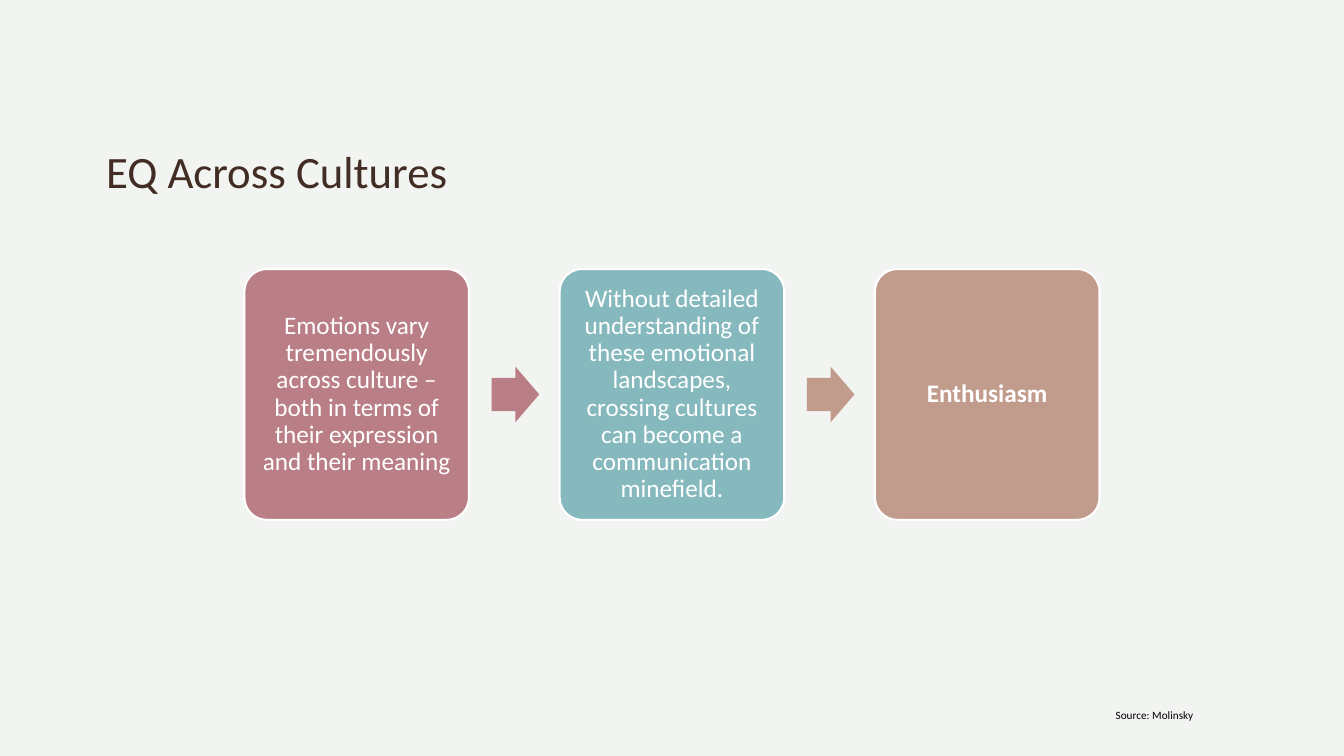
import dataclasses

import pptx
import pptx.dml.color
import pptx.enum.shapes
import pptx.enum.text
import pptx.util

Cm = pptx.util.Cm
Pt = pptx.util.Pt
Align = pptx.enum.text.PP_ALIGN
Anchor = pptx.enum.text.MSO_ANCHOR
Preset = pptx.enum.shapes.MSO_SHAPE


@dataclasses.dataclass(frozen=True)
class Theme:
    """Colours, font and type sizes of the slide."""
    font: str = "Calibri"
    background: str = "F2F4F1"
    title: str = "412D24"
    light: str = "FFFFFF"
    dark: str = "000000"
    rose: str = "BA7F86"
    teal: str = "86B9BD"
    tan: str = "C19C8D"
    title_size: int = 32
    card_size: int = 18
    source_size: int = 8


THEME = Theme()
STEPS = [
    ("Emotions vary tremendously across culture – both in terms of their "
     "expression and their meaning", THEME.rose, False),
    ("Without detailed understanding of these emotional landscapes, crossing "
     "cultures can become a communication minefield.", THEME.teal, False),
    ("Enthusiasm", THEME.tan, True),
]


def color(value):
    """Return a colour object for a hexadecimal value."""
    return pptx.dml.color.RGBColor.from_string(value)


def set_values(target, values):
    """Set each named attribute of the target."""
    for name, value in values.items():
        setattr(target, name, value)


def write_text(shape, text, size, tint, alignment, frame_values, bold=False, spacing=1.0):
    """Put one formatted paragraph into a shape."""
    frame = shape.text_frame
    set_values(frame, {"text": text, "word_wrap": True,
                       "auto_size": pptx.enum.text.MSO_AUTO_SIZE.NONE, **frame_values})
    paragraph = frame.paragraphs[0]
    set_values(paragraph, {"alignment": alignment, "line_spacing": spacing})
    font = paragraph.runs[0].font
    set_values(font, {"name": THEME.font, "size": Pt(size), "bold": bold})
    font.color.rgb = color(tint)


def add_preset(slide, preset, box, fill, adjustments):
    """Add a flat filled preset shape without an outline."""
    shape = slide.shapes.add_shape(preset, *box)
    shape.shadow.inherit = False
    shape.fill.solid()
    shape.fill.fore_color.rgb = color(fill)
    shape.line.fill.background()
    for index, value in enumerate(adjustments):
        shape.adjustments[index] = value
    return shape


def add_title(slide, box, text):
    """Place and format the title placeholder."""
    title = slide.shapes.title
    set_values(title, dict(zip(("left", "top", "width", "height"), box)))
    write_text(title, text, THEME.title_size, THEME.title, Align.LEFT,
               {"vertical_anchor": Anchor.BOTTOM}, spacing=0.9)


def add_card(slide, box, text, fill, bold):
    """Add one rounded card with centred text."""
    card = add_preset(slide, Preset.ROUNDED_RECTANGLE, box, fill, [0.1])
    card.line.fill.solid()
    card.line.fill.fore_color.rgb = color(THEME.light)
    card.line.width = Pt(1.5)
    margins = ("margin_left", "margin_top", "margin_right", "margin_bottom")
    write_text(card, text, THEME.card_size, THEME.light, Align.CENTER,
               {"vertical_anchor": Anchor.MIDDLE, **dict.fromkeys(margins, Cm(0.18))},
               bold, 0.9)


def add_process(slide, box, steps):
    """Spread cards evenly over the box with an arrow in each gap."""
    left, top, width, height = box
    card_width = Cm(5.66)
    pitch = (width - card_width) // (len(steps) - 1)
    arrow_width, arrow_height = Cm(1.2), Cm(1.4)
    arrow_left = card_width + Cm(0.57)
    arrow_top = top + (height - arrow_height) // 2
    for index, (text, fill, bold) in enumerate(steps):
        card_left = left + index * pitch
        add_card(slide, (card_left, top, card_width, height), text, fill, bold)
        if index < len(steps) - 1:
            arrow_fill = THEME.rose if index == 0 else steps[index + 1][1]
            add_preset(slide, Preset.RIGHT_ARROW,
                       (card_left + arrow_left, arrow_top, arrow_width, arrow_height),
                       arrow_fill, [0.6, 0.5])


def add_source(slide, box, text):
    """Add the right-aligned source line."""
    write_text(slide.shapes.add_textbox(*box), text, THEME.source_size, THEME.dark,
               Align.RIGHT, {"vertical_anchor": Anchor.TOP})


def main():
    """Build and save the slide."""
    presentation = pptx.Presentation()
    set_values(presentation, {"slide_width": Cm(33.87), "slide_height": Cm(19.05)})
    slide = presentation.slides.add_slide(presentation.slide_layouts.get_by_name("Title Only"))
    slide.background.fill.solid()
    slide.background.fill.fore_color.rgb = color(THEME.background)
    add_title(slide, (Cm(2.42), Cm(1.63), Cm(29.03), Cm(3.5)), "EQ Across Cultures")
    add_process(slide, (Cm(6.16), Cm(6.78), Cm(21.55), Cm(6.32)), STEPS)
    add_source(slide, (Cm(18.9), Cm(17.73), Cm(11.43), Cm(0.6)), "Source: Molinsky")
    presentation.save("out.pptx")


if __name__ == "__main__":
    main()
